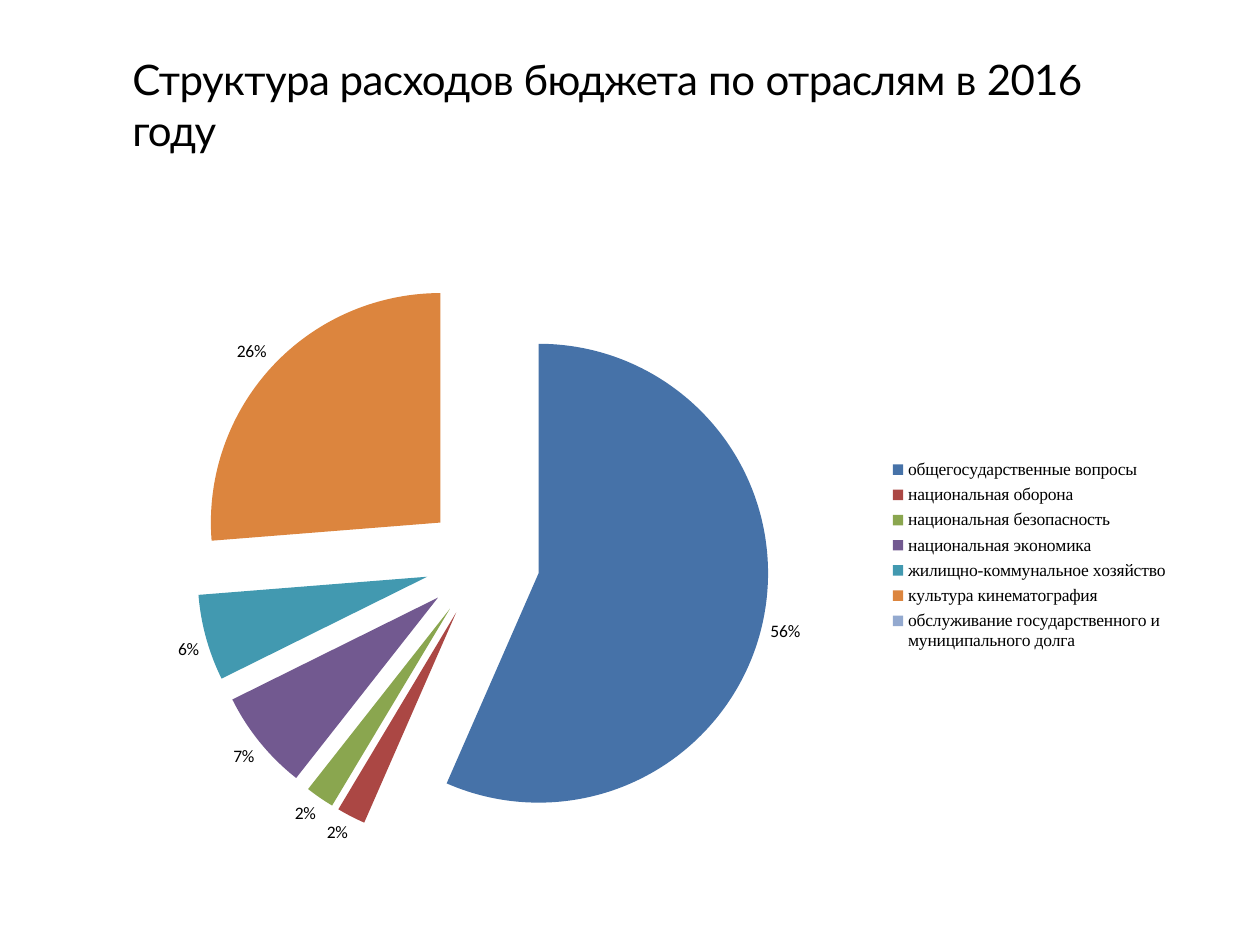
"""Build a slide with an exploded pie of 2016 budget spending by sector."""
from dataclasses import dataclass

from lxml import etree
from pptx import Presentation
from pptx import util as u
from pptx.chart.data import CategoryChartData
from pptx.dml.color import RGBColor
from pptx.enum import chart as ch
from pptx.enum import text
from pptx.oxml.ns import qn


@dataclass(frozen=True)
class Theme:
    ink: str = "000000"
    title_font: str = "Lato"
    label_font: str = "Calibri"
    legend_font: str = "Times New Roman"
    title_size: int = 24
    chart_size: int = 10


def set_layout(parent, index, inner, **box):
    for old in parent.findall(qn("c:layout")):
        parent.remove(old)
    layout = etree.Element(qn("c:layout"))
    manual = etree.SubElement(layout, qn("c:manualLayout"))
    modes = {"layoutTarget": "inner"} if inner else {}
    for tag, val in {**modes, "xMode": "edge", "yMode": "edge", **box}.items():
        etree.SubElement(manual, qn("c:" + tag)).set("val", str(val))
    parent.insert(index, layout)


def set_font(font, name, size):
    font.name, font.size = name, u.Pt(size)
    font.color.rgb = RGBColor.from_string(theme.ink)


theme = Theme()
title_runs = [
    ("Структура расходов ", -30), ("бюджета ", -40), ("по ", -20),
    ("отраслям ", -30), ("в ", -20), ("2016 году", -40),
]
sectors = [
    ("общегосударственные вопросы", 56, "4672A8"),
    ("национальная оборона", 2, "AB4744"),
    ("национальная безопасность", 2, "8AA64F"),
    ("национальная экономика", 7, "725990"),
    ("жилищно-коммунальное хозяйство", 6, "4299B0"),
    ("культура кинематография", 26, "DC853E"),
    ("обслуживание государственного и муниципального долга", 0, "93A9CF"),
]

prs = Presentation()
prs.slide_width, prs.slide_height = u.Inches(10), u.Inches(7.5)
W, H = prs.slide_width, prs.slide_height
s = prs.slides.add_slide(prs.slide_layouts[6])

sp = s.shapes.add_textbox(int(W * 0.104), int(H * 0.057), int(W * 0.791), int(H * 0.055))
tf = sp.text_frame
tf.word_wrap = True
tf.auto_size = text.MSO_AUTO_SIZE.SHAPE_TO_FIT_TEXT
tf.margin_left = tf.margin_top = tf.margin_right = tf.margin_bottom = 0
p = tf.paragraphs[0]
p._p.get_or_add_pPr().set("marL", str(u.Inches(0.01)))
for words, spacing in title_runs:
    r = p.add_run()
    r.text = words
    set_font(r.font, theme.title_font, theme.title_size)
    r._r.get_or_add_rPr().set("spc", str(spacing))

data = CategoryChartData()
data.categories = [name for name, _, _ in sectors]
data.add_series("Series 1", [share for _, share, _ in sectors])
chart = s.shapes.add_chart(
    ch.XL_CHART_TYPE.PIE,
    int(W * 0.078), int(H * 0.24), int(W * 0.859), int(H * 0.688), data,
).chart
chart.has_title = False
set_font(chart.font, theme.label_font, theme.chart_size)

plot = chart.plots[0]
plot.vary_by_categories = True
series = plot.series[0]
for i, (_, _, color) in enumerate(sectors):
    fill = series.points[i].format.fill
    fill.solid()
    fill.fore_color.rgb = RGBColor.from_string(color)
explosion = etree.Element(qn("c:explosion"))
explosion.set("val", "25")
series._element.find(qn("c:tx")).addnext(explosion)

plot.has_data_labels = True
labels = plot.data_labels
labels.show_value = True
labels.show_percentage = False
labels.number_format = '0"%"'
labels.number_format_is_linked = False
labels.position = ch.XL_LABEL_POSITION.OUTSIDE_END
set_font(labels.font, theme.label_font, theme.chart_size)

chart.has_legend = True
legend = chart.legend
legend.position = ch.XL_LEGEND_POSITION.RIGHT
legend.include_in_layout = False
set_font(legend.font, theme.legend_font, theme.chart_size)
set_layout(legend._element, 1, False, x=0.73, y=0.35, w=0.26, h=0.31)
set_layout(plot._element.getparent(), 0, True, x=0.09, y=0.07, w=0.53, h=0.89)

prs.save("out.pptx")
